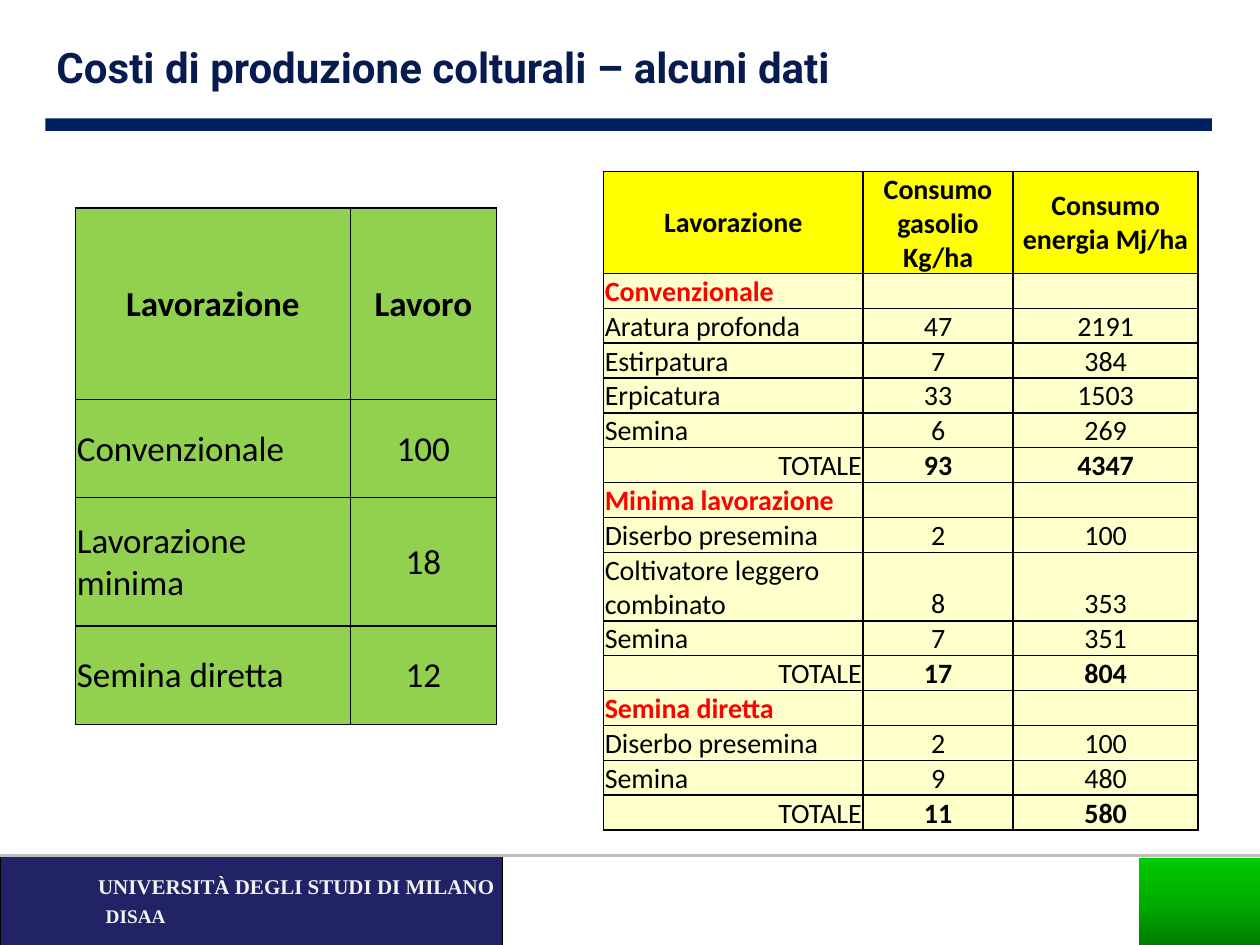
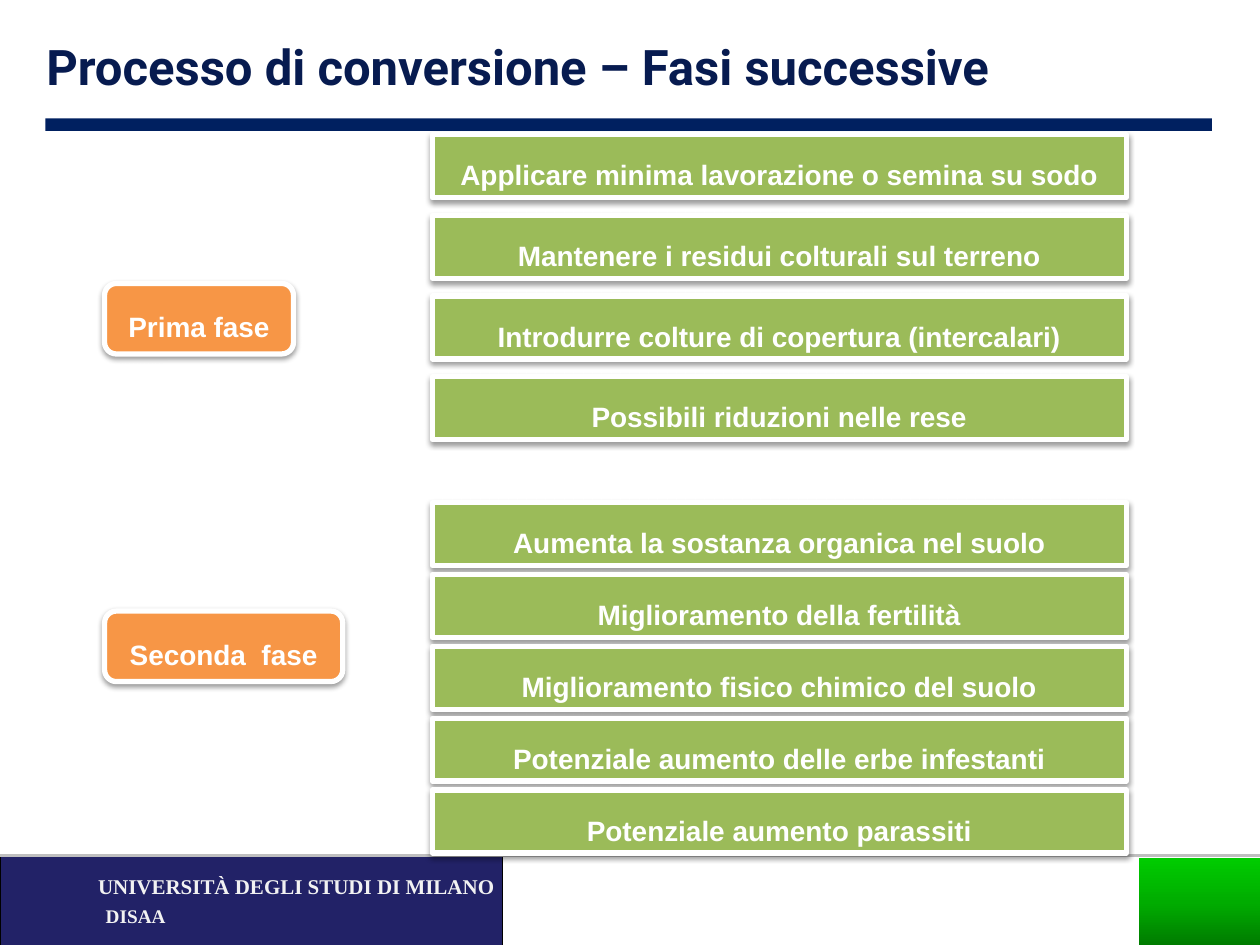
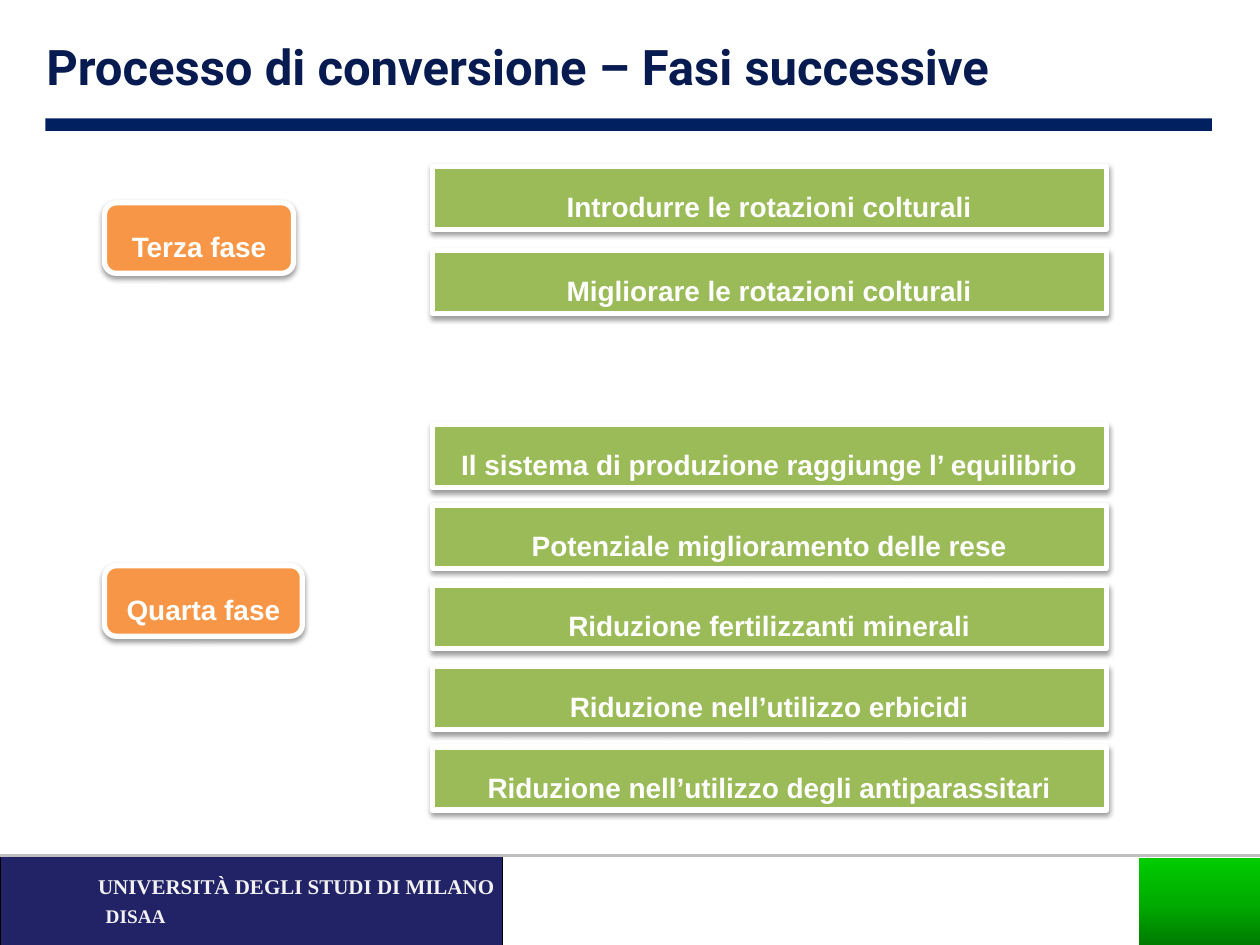
from copy import deepcopy

from lxml import etree
from pptx import Presentation
from pptx import util as u
from pptx.dml.color import RGBColor
from pptx.enum import shapes, text
from pptx.oxml import parse_xml
from pptx.oxml.ns import nsdecls, qn

# Grid: 100 columns by 75 rows cover the slide
COLUMNS, ROWS = 100, 75
SLIDE_WIDTH, SLIDE_HEIGHT = u.Inches(10), u.Inches(7.5)

NAVY, TITLE, BAND, GREY = "002060", "071B50", "222267", "BFBFBF"
WHITE, PALE, BLACK, RED = "FFFFFF", "F2F2F2", "000000", "FF0000"
GREEN, ORANGE = "9BBB59", "F79646"
LIME, YELLOW, CREAM = "92D050", "FFFF00", "FFFFCC"
CORNER_GRADIENT = [(0, "007900"), (0.5, "00AC00"), (1, "00CC00")]

LEFT, CENTER, RIGHT = text.PP_ALIGN.LEFT, text.PP_ALIGN.CENTER, text.PP_ALIGN.RIGHT
TOP, MIDDLE, BOTTOM = text.MSO_ANCHOR.TOP, text.MSO_ANCHOR.MIDDLE, text.MSO_ANCHOR.BOTTOM
RECTANGLE = shapes.MSO_SHAPE.RECTANGLE
ROUNDED = shapes.MSO_SHAPE.ROUNDED_RECTANGLE

# Phase boxes, in grid units
PHASE_LEFT, PHASE_HEIGHT = 8.3, 5.6
STEP_LEFT, STEP_HEIGHT = 34.3, 5

WORK_ROWS = [
    ("Lavorazione", "Lavoro"),
    ("Convenzionale", "100"),
    ("Lavorazione minima", "18"),
    ("Semina diretta", "12"),
]
CONSUMPTION_ROWS = [
    ("Lavorazione", "Consumo gasolio Kg/ha", "Consumo energia Mj/ha"),
    ("Convenzionale", "", ""),
    ("Aratura profonda", "47", "2191"),
    ("Estirpatura", "7", "384"),
    ("Erpicatura", "33", "1503"),
    ("Semina", "6", "269"),
    ("TOTALE", "93", "4347"),
    ("Minima lavorazione", "", ""),
    ("Diserbo presemina", "2", "100"),
    ("Coltivatore leggero combinato", "8", "353"),
    ("Semina", "7", "351"),
    ("TOTALE", "17", "804"),
    ("Semina diretta", "", ""),
    ("Diserbo presemina", "2", "100"),
    ("Semina", "9", "480"),
    ("TOTALE", "11", "580"),
]


def color(value):
    return RGBColor.from_string(value)


def across(columns):
    return round(SLIDE_WIDTH * columns / COLUMNS)


def down(rows):
    return round(SLIDE_HEIGHT * rows / ROWS)


def place(left, top, width, height):
    return across(left), down(top), across(width), down(height)


def write(frame, content, size=16, font="Arial", ink=WHITE, bold=True,
          align=LEFT, anchor=TOP, spacing=None):
    """Put one formatted paragraph in a text frame."""
    frame.word_wrap = True
    frame.vertical_anchor = anchor
    paragraph = frame.paragraphs[0]
    paragraph.alignment = align
    if spacing:
        paragraph.line_spacing = spacing
    if not content:
        etree.SubElement(paragraph._p, qn("a:endParaRPr"), sz=str(size * 100))
        return
    run = paragraph.add_run()
    run.text = content
    run.font.size, run.font.name, run.font.bold = u.Pt(size), font, bold
    run.font.color.rgb = color(ink)


def add_text(slide, box, content, **style):
    write(slide.shapes.add_textbox(*place(*box)).text_frame, content, **style)


def add_box(slide, kind, box, fill, line=None, line_width=0.75):
    shape = slide.shapes.add_shape(kind, *place(*box))
    shape.fill.solid()
    shape.fill.fore_color.rgb = color(fill)
    if line:
        shape.line.color.rgb = color(line)
        shape.line.width = u.Pt(line_width)
    else:
        shape.line.fill.background()
    shape.shadow.inherit = False
    return shape


def set_gradient(shape, stops, angle):
    shape.fill.gradient()
    stop_list = shape.element.spPr.find(".//" + qn("a:gsLst"))
    while len(stop_list) < len(stops):
        stop_list.append(deepcopy(stop_list[0]))
    for stop, (position, value) in zip(shape.fill.gradient_stops, stops):
        stop.position = position
        stop.color.rgb = color(value)
    shape.fill.gradient_angle = angle


def add_shadow(shape):
    effects = shape.element.spPr.find(qn("a:effectLst"))
    effects.append(parse_xml(
        f'<a:outerShdw {nsdecls("a")} blurRad="{u.Pt(3.1)}" dist="{u.Pt(1.6)}" '
        f'dir="5400000" rotWithShape="0"><a:srgbClr val="{BLACK}">'
        '<a:alpha val="38000"/></a:srgbClr></a:outerShdw>'))


def add_base(presentation, title, box, size):
    """New slide with footer, rule and title."""
    slide = presentation.slides.add_slide(presentation.slide_layouts[6])
    add_box(slide, RECTANGLE, (0, 67.9, 39.9, 7.2), BAND, BLACK)
    rule = slide.shapes.add_connector(
        shapes.MSO_CONNECTOR.STRAIGHT, 0, down(67.9), SLIDE_WIDTH, down(67.9))
    rule.line.color.rgb = color(GREY)
    rule.line.width = u.Pt(2.25)
    etree.SubElement(rule.element.spPr, qn("a:effectLst"))
    footer = dict(font="Times New Roman", ink=PALE, spacing=1.2)
    add_text(slide, (7.4, 70.9, 9.8, 3.7), "DISAA", size=11, **footer)
    add_text(slide, (6.8, 68.4, 35.3, 3.7), "UNIVERSITÀ DEGLI STUDI DI MILANO",
             size=12, **footer)
    add_box(slide, RECTANGLE, (3.6, 9.4, 92.6, 1), NAVY)
    corner = add_box(slide, RECTANGLE, (90.4, 68.1, 9.7, 7.1), WHITE)
    set_gradient(corner, CORNER_GRADIENT, 90)
    add_text(slide, box, title, size=size, font="Roboto", ink=TITLE)
    return slide


def add_label(slide, kind, box, fill, content, anchor):
    """Shadowed box with a white outline and a centred caption."""
    shape = add_box(slide, kind, box, fill, WHITE, 3)
    add_shadow(shape)
    write(shape.text_frame, content, align=CENTER, anchor=anchor, spacing=1.5)


def add_phase(slide, name, name_top, name_width, steps, top, pitch, width):
    """A phase name with its column of equally spaced steps."""
    add_label(slide, ROUNDED, (PHASE_LEFT, name_top, name_width, PHASE_HEIGHT),
              ORANGE, name, TOP)
    for index, step in enumerate(steps):
        box = (STEP_LEFT, top + index * pitch, width, STEP_HEIGHT)
        add_label(slide, RECTANGLE, box, GREEN, step, MIDDLE)


def format_cell(cell, fill):
    cell.margin_left = cell.margin_right = cell.margin_top = u.Inches(0.01)
    cell.margin_bottom = 0
    properties = cell._tc.get_or_add_tcPr()
    for side in ("lnL", "lnR", "lnT", "lnB"):
        properties.append(parse_xml(
            f'<a:{side} {nsdecls("a")} w="{u.Pt(1)}"><a:solidFill>'
            f'<a:srgbClr val="{BLACK}"/></a:solidFill></a:{side}>'))
    cell.fill.solid()
    cell.fill.fore_color.rgb = color(fill)


def add_data_table(slide, box, rows, widths, heights, size, header_fill,
                   body_fill, body_anchor):
    frame = slide.shapes.add_table(len(rows), len(widths), *place(*box))
    table = frame.table
    table.first_row = table.horz_banding = False
    for column, width in zip(table.columns, widths):
        column.width = across(width)
    for row, height in zip(table.rows, heights):
        row.height = down(height)
    frame.height = down(box[3])
    for r, values in enumerate(rows):
        header, section, total = r == 0, not values[1], values[0] == "TOTALE"
        for c, value in enumerate(values):
            cell = table.cell(r, c)
            format_cell(cell, header_fill if header else body_fill)
            first = RIGHT if total else LEFT
            write(cell.text_frame, value, size=size, font="Calibri",
                  ink=RED if section else BLACK,
                  bold=header or section or (total and c > 0),
                  align=CENTER if header or c else first)
            cell.vertical_anchor = MIDDLE if header else body_anchor


def add_costs_slide(presentation):
    slide = add_base(presentation, "Costi di produzione colturali – alcuni dati",
                     (3.5, 2.8, 85.3, 5), 24)
    add_data_table(slide, (6, 16.5, 33.4, 41), WORK_ROWS, (21.8, 11.6),
                   (15.2, 7.8, 10.2, 7.8), 20, LIME, LIME, MIDDLE)
    body_heights = [2.2] * (len(CONSUMPTION_ROWS) - 1)
    add_data_table(slide, (47.9, 13.6, 47.2, 52.3), CONSUMPTION_ROWS,
                   (20.6, 11.9, 14.7), [6.8] + body_heights, 16, YELLOW, CREAM,
                   BOTTOM)


def add_phases_slide(presentation, phases, step_width):
    slide = add_base(presentation, "Processo di conversione – Fasi successive",
                     (2.7, 2.4, 91.4, 5.7), 28)
    for phase in phases:
        add_phase(slide, *phase, step_width)


def main():
    presentation = Presentation()
    presentation.slide_width, presentation.slide_height = SLIDE_WIDTH, SLIDE_HEIGHT
    add_costs_slide(presentation)
    # Each phase: name, its top and width, steps, their top and pitch
    add_phases_slide(presentation, [
        ("Prima fase", 22.5, 15, [
            "Applicare minima lavorazione o semina su sodo",
            "Mantenere i residui colturali sul terreno",
            "Introdurre colture di copertura (intercalari)",
            "Possibili riduzioni nelle rese",
        ], 10.7, 6.4),
        ("Seconda  fase", 48.5, 18.9, [
            "Aumenta la sostanza organica nel suolo",
            "Miglioramento della fertilità",
            "Miglioramento fisico chimico del suolo",
            "Potenziale aumento delle erbe infestanti",
            "Potenziale aumento parassiti",
        ], 39.9, 5.7),
    ], 55.1)
    add_phases_slide(presentation, [
        ("Terza fase", 16.1, 15, [
            "Introdurre le rotazioni colturali",
            "Migliorare le rotazioni colturali",
        ], 13.2, 6.7),
        ("Quarta fase", 44.9, 15.7, [
            "Il sistema di produzione raggiunge l’ equilibrio",
            "Potenziale miglioramento delle rese",
            "Riduzione fertilizzanti minerali",
            "Riduzione nell’utilizzo erbicidi",
            "Riduzione nell’utilizzo degli antiparassitari",
        ], 33.7, 6.4),
    ], 53.5)
    presentation.save("out.pptx")


if __name__ == "__main__":
    main()
